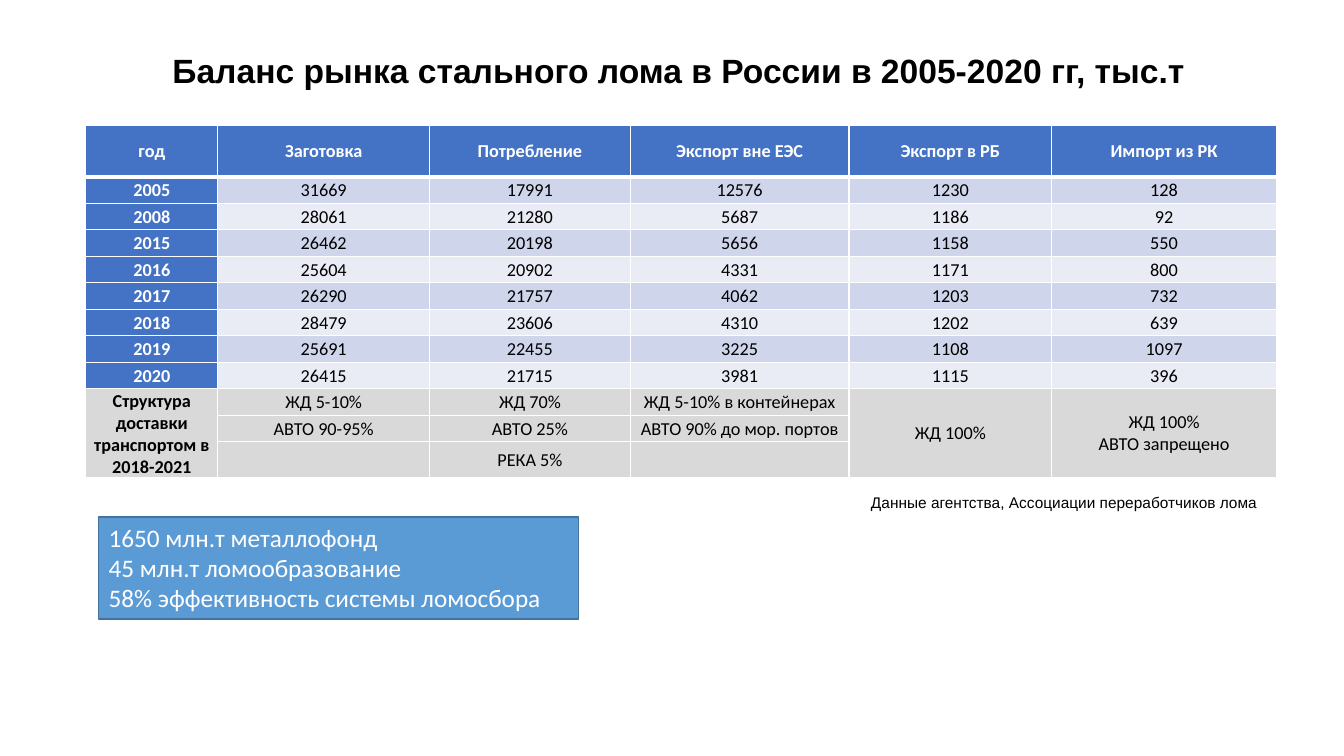
"""Build the slide on the balance of the steel scrap market."""
from dataclasses import dataclass

from lxml import etree
from pptx import Presentation
from pptx import util as u
from pptx.dml.color import RGBColor
from pptx.enum import shapes, text
from pptx.oxml.ns import qn

WIDTH, HEIGHT = u.Inches(13.33), u.Inches(7.5)


@dataclass(frozen=True)
class Theme:
    """Hold the colours, fonts and sizes of the slide."""

    heading_font: str = "Arial"
    body_font: str = "Calibri"
    title_size: int = 24
    box_size: int = 18
    table_size: int = 13
    note_size: int = 11
    black: str = "000000"
    white: str = "FFFFFF"
    header: str = "4472C4"
    bands: tuple = ("CFD5EA", "E9EBF5")
    delivery: str = "D9D9D9"
    box: str = "5B9BD5"
    box_line: str = "43739E"


THEME = Theme()

HEADERS = ["год", "Заготовка", "Потребление", "Экспорт вне ЕЭС", "Экспорт в РБ", "Импорт из РК"]
BALANCE = [
    [2005, 31669, 17991, 12576, 1230, 128],
    [2008, 28061, 21280, 5687, 1186, 92],
    [2015, 26462, 20198, 5656, 1158, 550],
    [2016, 25604, 20902, 4331, 1171, 800],
    [2017, 26290, 21757, 4062, 1203, 732],
    [2018, 28479, 23606, 4310, 1202, 639],
    [2019, 25691, 22455, 3225, 1108, 1097],
    [2020, 26415, 21715, 3981, 1115, 396],
]
DELIVERY = [
    ["Структура доставки транспортом в 2018-2021", "ЖД 5-10%", "ЖД 70%",
     "ЖД 5-10% в контейнерах", "ЖД 100%", "ЖД 100%\nАВТО запрещено"],
    ["", "АВТО 90-95%", "АВТО 25%", "АВТО 90% до мор. портов", "", ""],
    ["", "", "РЕКА 5%", "", "", ""],
]
MERGED_COLUMNS = (0, 4, 5)
COLUMN_SHARES = [9.83, 15.75, 14.93, 16.28, 15.08, 16.73]
ROW_SHARES = [6.85] + [3.51] * 10 + [4.67]


def across(share):
    """Turn a percentage of the slide width into a length."""
    return int(WIDTH * share / 100)


def down(share):
    """Turn a percentage of the slide height into a length."""
    return int(HEIGHT * share / 100)


def place(left, top, width, height):
    """Turn percentages of the slide into a frame."""
    return across(left), down(top), across(width), down(height)


def set_values(target, **values):
    """Set attributes of an object from format values."""
    for name, value in values.items():
        setattr(target, name, value)


def write(frame, content, font, size, color, bold=False, **paragraph_format):
    """Write lines of text as paragraphs of one style."""
    for index, line in enumerate(content.split("\n")):
        paragraph = frame.add_paragraph() if index else frame.paragraphs[0]
        set_values(paragraph, **paragraph_format)
        if line:
            run = paragraph.add_run()
            run.text = line
            set_values(run.font, name=font, size=u.Pt(size), bold=bold)
            run.font.color.rgb = RGBColor.from_string(color)


def add_label(slide, frame, content, size, wrap, anchor, **style):
    """Add a text box in the heading font."""
    label = slide.shapes.add_textbox(*place(*frame)).text_frame
    set_values(label, word_wrap=wrap, vertical_anchor=anchor)
    write(label, content, THEME.heading_font, size, THEME.black, **style)


def add_box(slide, frame, content):
    """Add a filled rectangle with left-aligned text."""
    box = slide.shapes.add_shape(shapes.MSO_SHAPE.RECTANGLE, *place(*frame))
    box.shadow.inherit = False
    box.fill.solid()
    box.fill.fore_color.rgb = RGBColor.from_string(THEME.box)
    box.line.color.rgb = RGBColor.from_string(THEME.box_line)
    box.line.width = u.Pt(1)
    set_values(box.text_frame, word_wrap=True, vertical_anchor=text.MSO_ANCHOR.TOP)
    write(box.text_frame, content, THEME.body_font, THEME.box_size, THEME.white,
          alignment=text.PP_ALIGN.LEFT)


def add_borders(cell, widths):
    """Draw white left, right, top and bottom borders."""
    properties = cell._tc.get_or_add_tcPr()
    for index, (side, width) in enumerate(zip("LRTB", widths)):
        line = etree.Element(qn(f"a:ln{side}"), w=str(u.Pt(width)))
        fill = etree.SubElement(line, qn("a:solidFill"))
        etree.SubElement(fill, qn("a:srgbClr"), val=THEME.white)
        properties.insert(index, line)


def cell_style(row, column):
    """Choose the fill, text colour and weight of a cell."""
    if row > len(BALANCE):
        return THEME.delivery, THEME.black, column == 0
    if row == 0 or column == 0:
        return THEME.header, THEME.white, True
    return THEME.bands[(row - 1) % 2], THEME.black, False


def format_cell(cell, content, row, column):
    """Fill, frame and write one table cell."""
    fill, color, bold = cell_style(row, column)
    margin = u.Inches(0.01)
    set_values(cell, margin_left=margin, margin_right=margin, margin_top=margin,
               margin_bottom=0, vertical_anchor=text.MSO_ANCHOR.MIDDLE)
    cell.fill.solid()
    cell.fill.fore_color.rgb = RGBColor.from_string(fill)
    add_borders(cell, (1, 1, 3 if row == 1 else 1, 3 if row == 0 else 1))
    write(cell.text_frame, str(content), THEME.body_font, THEME.table_size, color, bold,
          alignment=text.PP_ALIGN.CENTER)


def add_balance_table(slide, left, top):
    """Add the market table with its merged delivery rows."""
    rows = [HEADERS] + BALANCE + DELIVERY
    frame = place(left, top, sum(COLUMN_SHARES), sum(ROW_SHARES))
    table = slide.shapes.add_table(len(rows), len(HEADERS), *frame).table
    set_values(table, first_row=False, horz_banding=False)
    for column, share in zip(table.columns, COLUMN_SHARES):
        column.width = across(share)
    for row, share in zip(table.rows, ROW_SHARES):
        row.height = down(share)
    for row, values in enumerate(rows):
        for column, content in enumerate(values):
            format_cell(table.cell(row, column), content, row, column)
    for column in MERGED_COLUMNS:
        first = table.cell(len(rows) - len(DELIVERY), column)
        first.merge(table.cell(len(rows) - 1, column))


def main():
    """Build and save the slide."""
    presentation = Presentation()
    set_values(presentation, slide_width=WIDTH, slide_height=HEIGHT)
    slide = presentation.slides.add_slide(presentation.slide_layouts[6])
    add_label(slide, (7.35, 0, 86.27, 19.33),
              "Баланс рынка стального лома в России в 2005-2020 гг, тыс.т",
              THEME.title_size, True, text.MSO_ANCHOR.MIDDLE, bold=True,
              alignment=text.PP_ALIGN.CENTER, line_spacing=0.9)
    add_label(slide, (64.07, 64.53, 31.58, 3.87),
              "Данные агентства, Ассоциации переработчиков лома",
              THEME.note_size, False, text.MSO_ANCHOR.TOP)
    add_balance_table(slide, 6.38, 16.53)
    add_box(slide, (7.35, 68.4, 35.71, 13.47),
            "1650 млн.т металлофонд\n45 млн.т ломообразование\n"
            "58% эффективность системы ломосбора")
    presentation.save("out.pptx")


if __name__ == "__main__":
    main()
